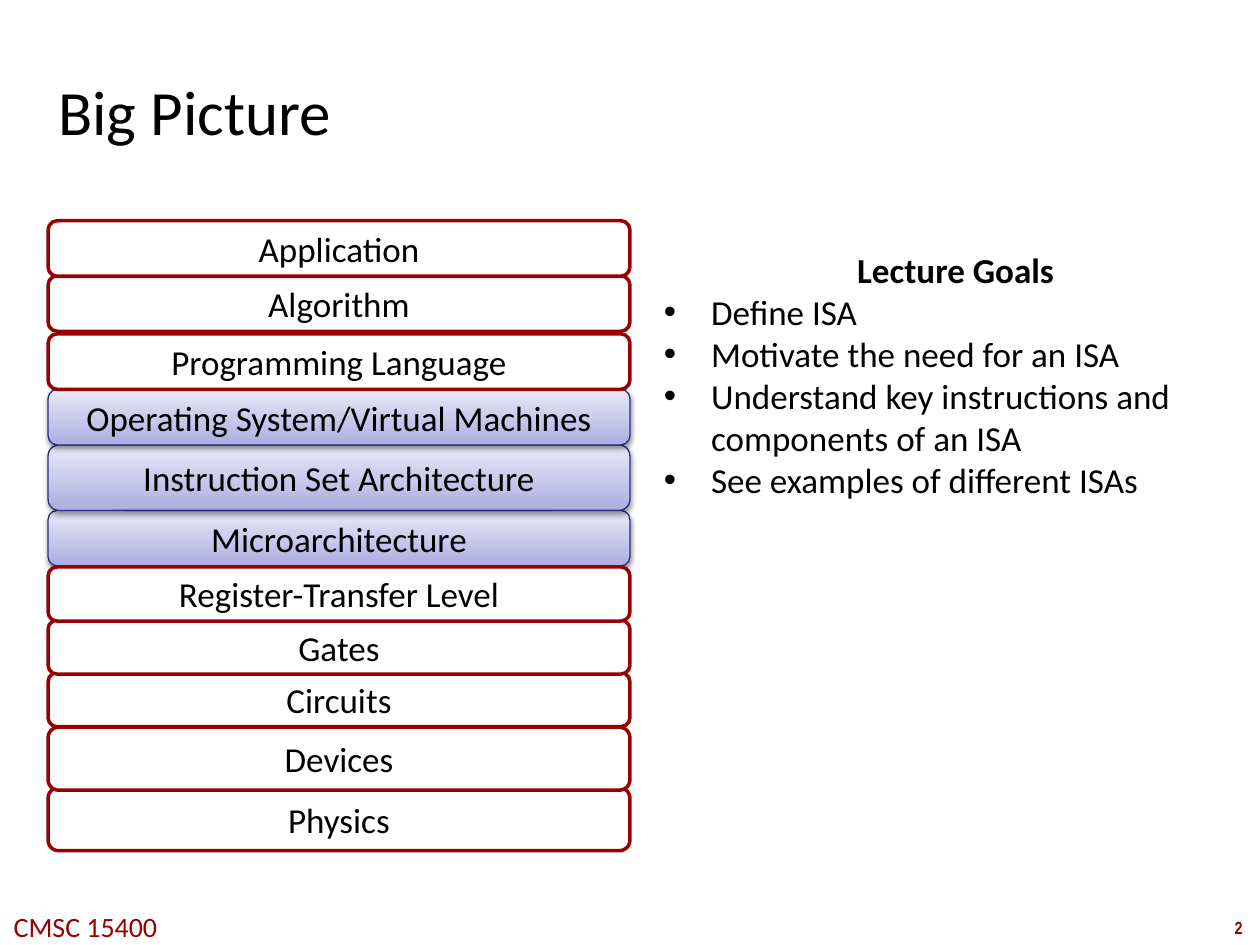
"""Build the Big Picture slide: a stack of system layers beside the lecture goals."""
from lxml.etree import SubElement
from pptx import Presentation
from pptx.dml.color import RGBColor
from pptx.enum.shapes import MSO_SHAPE as Shape
from pptx.enum.text import MSO_ANCHOR as Anchor, MSO_AUTO_SIZE as Fit, PP_ALIGN as Align
from pptx.oxml.ns import qn
from pptx.util import Cm, Pt

COLORS = {
    "text": "000000", "accent": "990000", "plain": "FFFFFF",
    "edge": "2A2A89", "dark": "ADADE1", "light": "E9E9F7", "shadow": "000000",
}

LAYERS = [
    ("Physics", 15.88, 1.27, False),
    ("Devices", 14.66, 1.27, False),
    ("Circuits", 13.56, 1.09, False),
    ("Gates", 12.5, 1.09, False),
    ("Microarchitecture", 10.29, 1.12, True),
    ("Instruction Set Architecture", 8.97, 1.32, True),
    ("Operating System/Virtual Machines", 7.85, 1.12, True),
    ("Programming Language", 6.73, 1.12, False),
    ("Algorithm", 5.56, 1.12, False),
    ("Application", 4.45, 1.12, False),
    ("Register-Transfer Level", 11.43, 1.09, False),
]

GOALS = [
    "Define ISA",
    "Motivate the need for an ISA",
    "Understand key instructions and components of an ISA",
    "See examples of different ISAs",
]


def rgb(name):
    return RGBColor.from_string(COLORS[name])


class Deck:
    font = "Calibri"
    size = 20
    indent = Cm(0.95)

    def __init__(self, prs):
        self.slide = prs.slides.add_slide(prs.slide_layouts[1])

    def run(self, p, text, size=None, color="text", bold=False, font=None):
        r = p.add_run()
        r.text = text
        r.font.name = font or self.font
        r.font.size = Pt(size or self.size)
        r.font.bold = bold
        r.font.color.rgb = rgb(color)

    def place(self, sp, left, top, width, height):
        sp.left, sp.top, sp.width, sp.height = map(Cm, (left, top, width, height))

    def title(self, text, *box):
        sp = self.slide.shapes.title
        self.place(sp, *box)
        tf = sp.text_frame
        tf.auto_size = Fit.NONE
        tf.vertical_anchor = Anchor.MIDDLE
        tf.margin_left = tf.margin_right = tf.margin_top = tf.margin_bottom = Cm(0.1)
        p = tf.paragraphs[0]
        p.alignment = Align.LEFT
        self.run(p, text, 36)

    def goals(self, heading, items, *box):
        sp = self.slide.placeholders[1]
        self.place(sp, *box)
        tf = sp.text_frame
        tf.auto_size = Fit.NONE
        for i, text in enumerate([heading] + items):
            p = tf.add_paragraph() if i else tf.paragraphs[0]
            p.space_before = Pt(0)
            p.alignment = Align.LEFT if i else Align.CENTER
            self.bullet(p, "•" if i else None)
            self.run(p, text, bold=not i)

    def bullet(self, p, char):
        pPr = p._p.get_or_add_pPr()
        indent = self.indent if char else 0
        pPr.set("marL", str(indent))
        pPr.set("indent", str(-indent))
        if char:
            SubElement(pPr, qn("a:buFont"), typeface="Arial")
            SubElement(pPr, qn("a:buChar"), char=char)
        else:
            SubElement(pPr, qn("a:buNone"))

    def layer(self, text, top, height, highlighted, left=0.97, width=11.73):
        sp = self.slide.shapes.add_shape(
            Shape.ROUNDED_RECTANGLE, Cm(left), Cm(top), Cm(width), Cm(height))
        sp.shadow.inherit = False
        if highlighted:
            sp.fill.gradient()
            sp.fill.gradient_angle = 90
            for stop, name in zip(sp.fill.gradient_stops, ("dark", "light")):
                stop.color.rgb = rgb(name)
            self.drop_shadow(sp)
        else:
            sp.fill.solid()
            sp.fill.fore_color.rgb = rgb("plain")
        sp.line.color.rgb = rgb("edge" if highlighted else "accent")
        sp.line.width = Pt(0.75 if highlighted else 2)
        tf = sp.text_frame
        tf.word_wrap = False
        tf.vertical_anchor = Anchor.MIDDLE
        p = tf.paragraphs[0]
        p.alignment = Align.CENTER
        self.run(p, text)

    def drop_shadow(self, sp):
        effects = sp._element.spPr.find(qn("a:effectLst"))
        shadow = SubElement(effects, qn("a:outerShdw"), blurRad=str(Pt(3.1)),
                            dist=str(Pt(1.6)), dir="5400000", rotWithShape="0")
        color = SubElement(shadow, qn("a:srgbClr"), val=COLORS["shadow"])
        SubElement(color, qn("a:alpha"), val="38000")

    def footer(self, text, box, **style):
        sp = self.slide.shapes.add_textbox(*map(Cm, box))
        tf = sp.text_frame
        tf.word_wrap = False
        p = tf.paragraphs[0]
        p.alignment = Align.CENTER
        self.run(p, text, color="accent", **style)


def main():
    prs = Presentation()
    prs.slide_width, prs.slide_height = Cm(25.4), Cm(19.05)
    deck = Deck(prs)
    deck.footer("2", (24.54, 18.36, 0.86, 0.69), size=10, bold=True, font="Arial Narrow")
    deck.footer("CMSC 15400", (-0.08, 18.21, 3.61, 0.94), size=16)
    deck.title("Big Picture", 1.07, 0.71, 23.29, 3.02)
    for layer in LAYERS:
        deck.layer(*layer)
    deck.goals("Lecture Goals", GOALS, 13.13, 4.88, 12.27, 5.38)
    prs.save("out.pptx")


if __name__ == "__main__":
    main()
